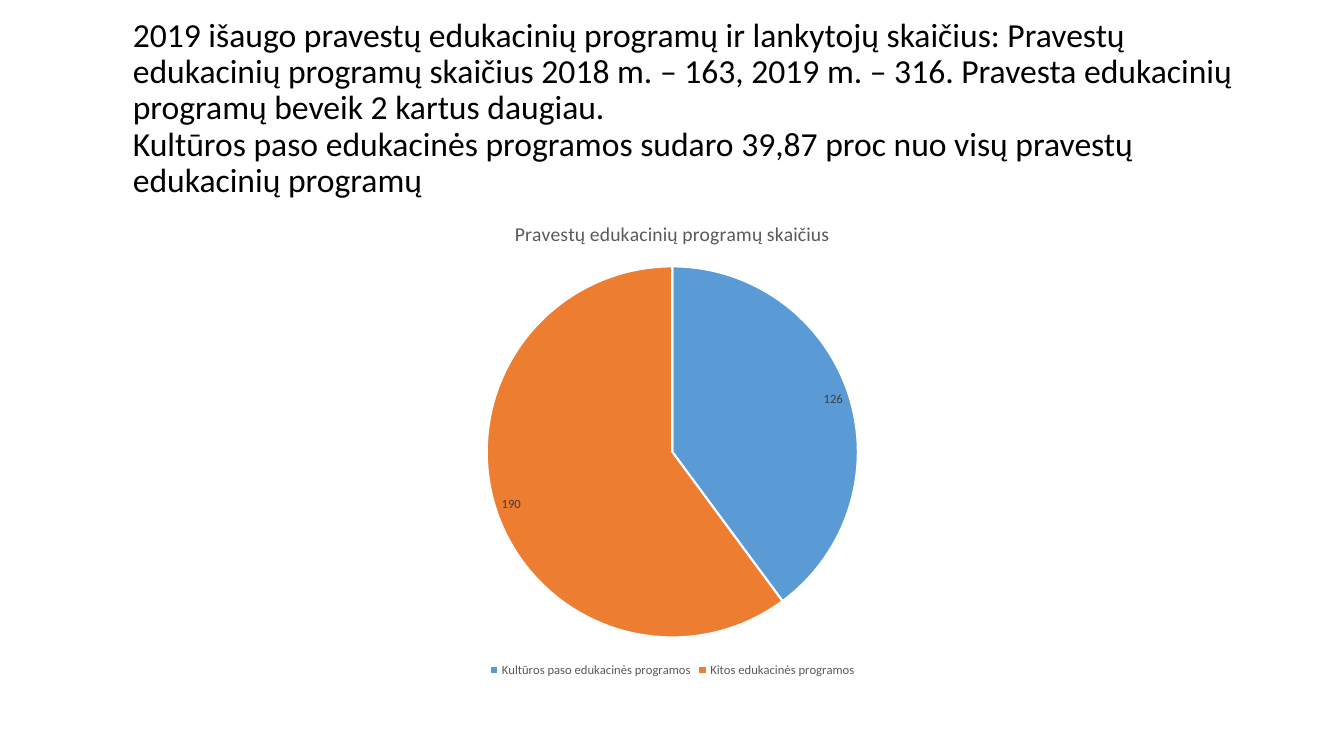
from pptx import Presentation
from pptx import util as u
from pptx.chart import data as cd
from pptx.dml import color
from pptx.enum import chart as ce, text


def rgb(value):
    return color.RGBColor.from_string(value)


class Deck:
    font = "Calibri"
    black, white, grey, dark = "000000", "FFFFFF", "595959", "404040"
    slices = ["5B9BD5", "ED7D31"]

    def __init__(self, width, height):
        self.prs = Presentation()
        self.prs.slide_width, self.prs.slide_height = u.Pt(width), u.Pt(height)
        self.s = self.prs.slides.add_slide(self.prs.slide_layouts[6])

    def style(self, font, size, fill):
        font.name, font.size, font.bold = self.font, u.Pt(size), False
        font.color.rgb = rgb(fill)

    def put_text(self, tf, content, size=24, fill=black, spacing=None):
        """Fill the first paragraph; a newline becomes a line break."""
        p = tf.paragraphs[0]
        p.text = content
        p.line_spacing = spacing
        for r in p.runs:
            self.style(r.font, size, fill)

    def text_box(self, box, content, **fmt):
        tf = self.s.shapes.add_textbox(*map(u.Pt, box)).text_frame
        tf.word_wrap = True
        tf.vertical_anchor = text.MSO_ANCHOR.MIDDLE
        self.put_text(tf, content, **fmt)

    def pie(self, box, title, values):
        data = cd.CategoryChartData()
        data.categories = list(values)
        data.add_series(title, list(values.values()))
        chart = self.s.shapes.add_chart(
            ce.XL_CHART_TYPE.PIE, *map(u.Pt, box), data).chart
        self.style(chart.font, 10, self.black)

        chart.has_title = True
        self.put_text(chart.chart_title.text_frame, title, size=14, fill=self.grey)
        chart.chart_title.include_in_layout = False

        chart.has_legend = True
        chart.legend.position = ce.XL_LEGEND_POSITION.BOTTOM
        chart.legend.include_in_layout = False
        self.style(chart.legend.font, 9, self.grey)

        plot = chart.plots[0]
        plot.vary_by_categories = True
        for i, fill in enumerate(self.slices):
            fmt = plot.series[0].points[i].format
            fmt.fill.solid()
            fmt.fill.fore_color.rgb = rgb(fill)
            fmt.line.color.rgb = rgb(self.white)
            fmt.line.width = u.Pt(1.5)

        labels = plot.series[0].data_labels
        labels.show_value = True
        labels.show_percentage = False
        labels.position = ce.XL_LABEL_POSITION.BEST_FIT
        self.style(labels.font, 9, self.dark)


def main():
    deck = Deck(960, 540)
    deck.text_box(
        (87.84, 11.52, 828, 132.48),
        "2019 išaugo pravestų edukacinių programų ir lankytojų skaičius: "
        "Pravestų edukacinių programų skaičius 2018 m. – 163, 2019 m. – 316. "
        "Pravesta edukacinių programų beveik 2 kartus daugiau.\n"
        "Kultūros paso edukacinės programos sudaro 39,87 proc nuo visų "
        "pravestų edukacinių programų",
        spacing=0.9)
    deck.pie(
        (66.24, 144, 828, 342.72),
        "Pravestų edukacinių programų skaičius",
        {"Kultūros paso edukacinės programos": 126,
         "Kitos edukacinės programos": 190})
    deck.prs.save("out.pptx")


if __name__ == "__main__":
    main()
